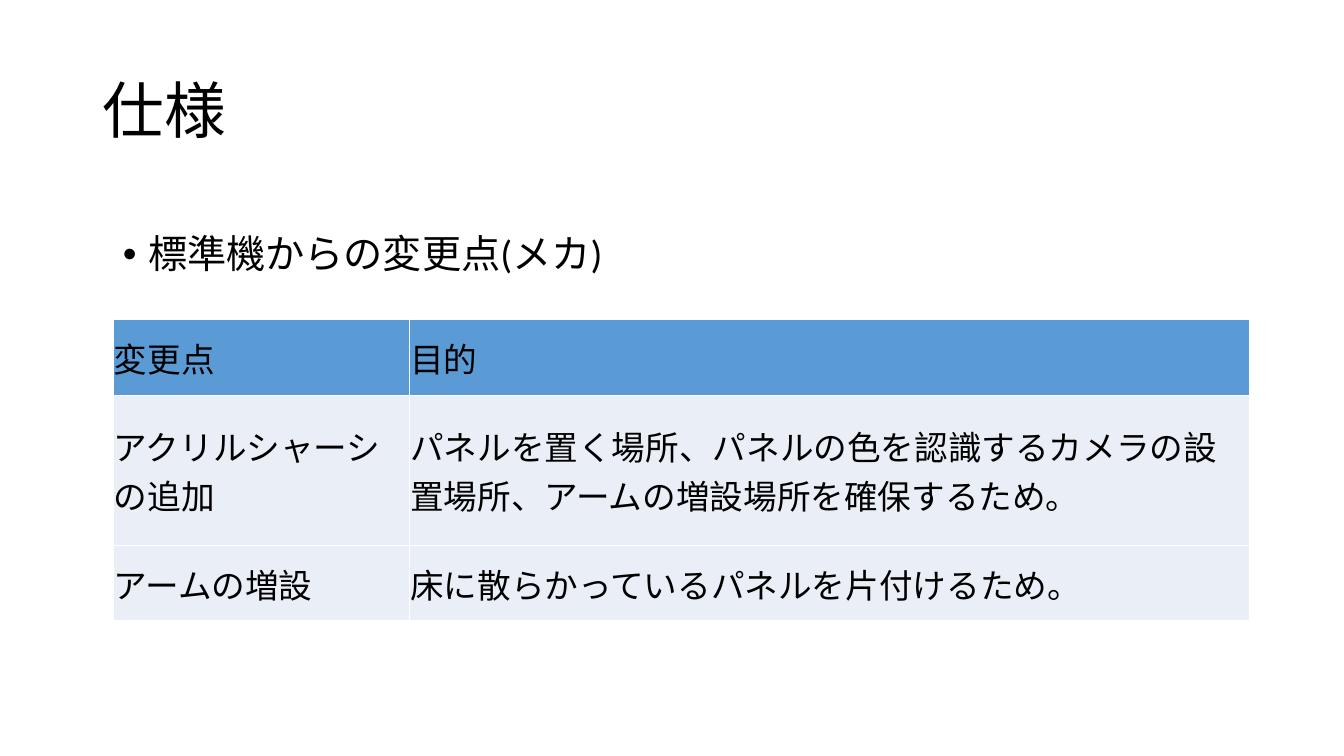
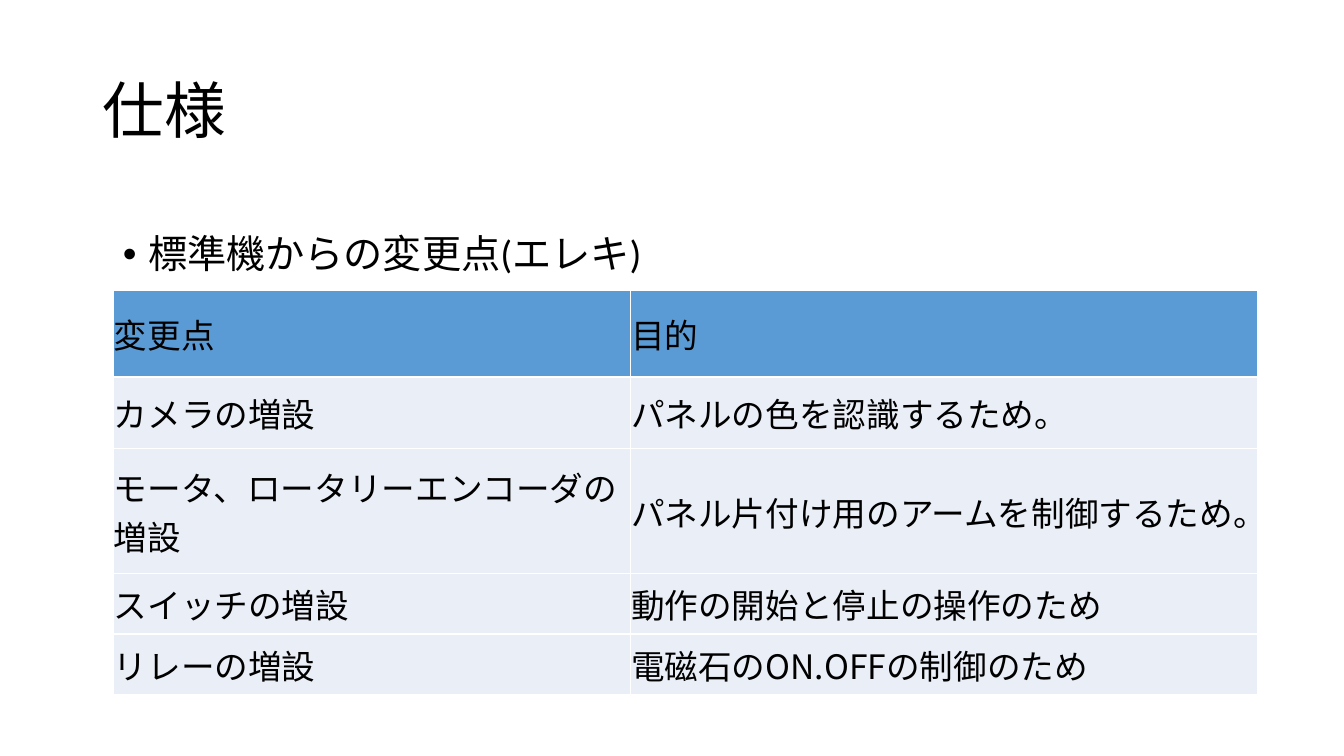
from dataclasses import dataclass

from lxml import etree
from pptx import Presentation
from pptx import util as u
from pptx.dml.color import RGBColor
from pptx.enum import text
from pptx.oxml import ns

# Content
TITLE = "仕様"
HEADER = ("変更点", "目的")
SLIDES = [
    {
        "bullet": "標準機からの変更点(メカ)",
        "top": 317,
        "columns": (294, 833),
        "heights": (75, 149, 75),
        "rows": [
            ("アクリルシャーシの追加",
             "パネルを置く場所、パネルの色を認識するカメラの設置場所、アームの増設場所を確保するため。"),
            ("アームの増設", "床に散らかっているパネルを片付けるため。"),
        ],
    },
    {
        "bullet": "標準機からの変更点(エレキ)",
        "top": 288,
        "columns": (513, 622),
        "heights": (86, 71, 124, 60, 60),
        "rows": [
            ("カメラの増設", "パネルの色を認識するため。"),
            ("モータ、ロータリーエンコーダの増設", "パネル片付け用のアームを制御するため。"),
            ("スイッチの増設", "動作の開始と停止の操作のため"),
            ("リレーの増設", "電磁石のON.OFFの制御のため"),
        ],
        "japanese_rows": (4,),
    },
]

# Layout in px, 100 to the inch
SLIDE_SIZE = (1333, 750)
TITLE_BOX = (92, 40, 1150, 145)
BULLET_BOX = (112, 228, 1063, 440)
TABLE_LEFT = 112
BULLET_INDENT = 25


@dataclass(frozen=True)
class Theme:
    latin: str = "Calibri"
    japanese: str = "Noto Sans CJK JP"
    ink: str = "000000"
    header: str = "5B9BD5"
    row: str = "EAEFF7"
    border: str = "FFFFFF"
    title_size: int = 44
    bullet_size: int = 28
    cell_size: int = 24


THEME = Theme()


def px(length):
    return u.Emu(length * 9144)


def add_xml(parent, tag, **attributes):
    return etree.SubElement(parent, ns.qn(tag), attributes)


def write(text_frame, words, size, latin=THEME.latin):
    """Set one left-aligned paragraph in the theme's fonts and colour."""
    text_frame.text = words
    text_frame.word_wrap = True
    paragraph = text_frame.paragraphs[0]
    paragraph.alignment = text.PP_ALIGN.LEFT
    font = paragraph.runs[0].font
    font.size, font.bold, font.name = u.Pt(size), False, latin
    font.color.rgb = RGBColor.from_string(THEME.ink)
    add_xml(paragraph.runs[0]._r.get_or_add_rPr(), "a:ea", typeface=THEME.japanese)
    return paragraph


def add_title(slide):
    shape = slide.shapes.title
    shape.left, shape.top, shape.width, shape.height = map(px, TITLE_BOX)
    write(shape.text_frame, TITLE, THEME.title_size).line_spacing = 0.9
    shape.text_frame.auto_size = text.MSO_AUTO_SIZE.NONE
    shape.text_frame.vertical_anchor = text.MSO_ANCHOR.MIDDLE


def add_bullet(slide, words):
    shape = slide.shapes.add_textbox(*map(px, BULLET_BOX))
    paragraph = write(shape.text_frame, words, THEME.bullet_size)
    paragraph.line_spacing = 0.9
    paragraph.space_before = u.Pt(10)
    properties = paragraph._p.get_or_add_pPr()
    properties.set("marL", str(px(BULLET_INDENT)))
    properties.set("indent", str(px(-BULLET_INDENT)))
    add_xml(properties, "a:buFont", typeface="Arial")
    add_xml(properties, "a:buChar", char="•")


def format_cell(cell, fill):
    cell.margin_left = cell.margin_top = cell.margin_right = px(1)
    cell.margin_bottom = 0
    cell.vertical_anchor = text.MSO_ANCHOR.MIDDLE
    properties = cell._tc.get_or_add_tcPr()
    for side in ("a:lnL", "a:lnR", "a:lnT", "a:lnB"):
        line = add_xml(properties, side, w=str(u.Pt(1)))
        add_xml(add_xml(line, "a:solidFill"), "a:srgbClr", val=THEME.border)
    cell.fill.solid()
    cell.fill.fore_color.rgb = RGBColor.from_string(fill)


def add_changes_table(slide, content):
    rows = [HEADER, *content["rows"]]
    columns, heights = content["columns"], content["heights"]
    frame = slide.shapes.add_table(
        len(rows), len(columns), px(TABLE_LEFT), px(content["top"]),
        px(sum(columns)), px(sum(heights)))
    table = frame.table
    table.first_row = table.horz_banding = False
    for column, width in zip(table.columns, columns):
        column.width = px(width)
    for i, (row, height, words) in enumerate(zip(table.rows, heights, rows)):
        row.height = px(height)
        latin = THEME.japanese if i in content.get("japanese_rows", ()) else THEME.latin
        for cell, value in zip(row.cells, words):
            write(cell.text_frame, value, THEME.cell_size, latin)
            format_cell(cell, THEME.row if i else THEME.header)


def main():
    presentation = Presentation()
    presentation.slide_width, presentation.slide_height = map(px, SLIDE_SIZE)
    title_only = presentation.slide_layouts[5]
    for content in SLIDES:
        slide = presentation.slides.add_slide(title_only)
        add_title(slide)
        add_bullet(slide, content["bullet"])
        add_changes_table(slide, content)
    presentation.save("out.pptx")


if __name__ == "__main__":
    main()
